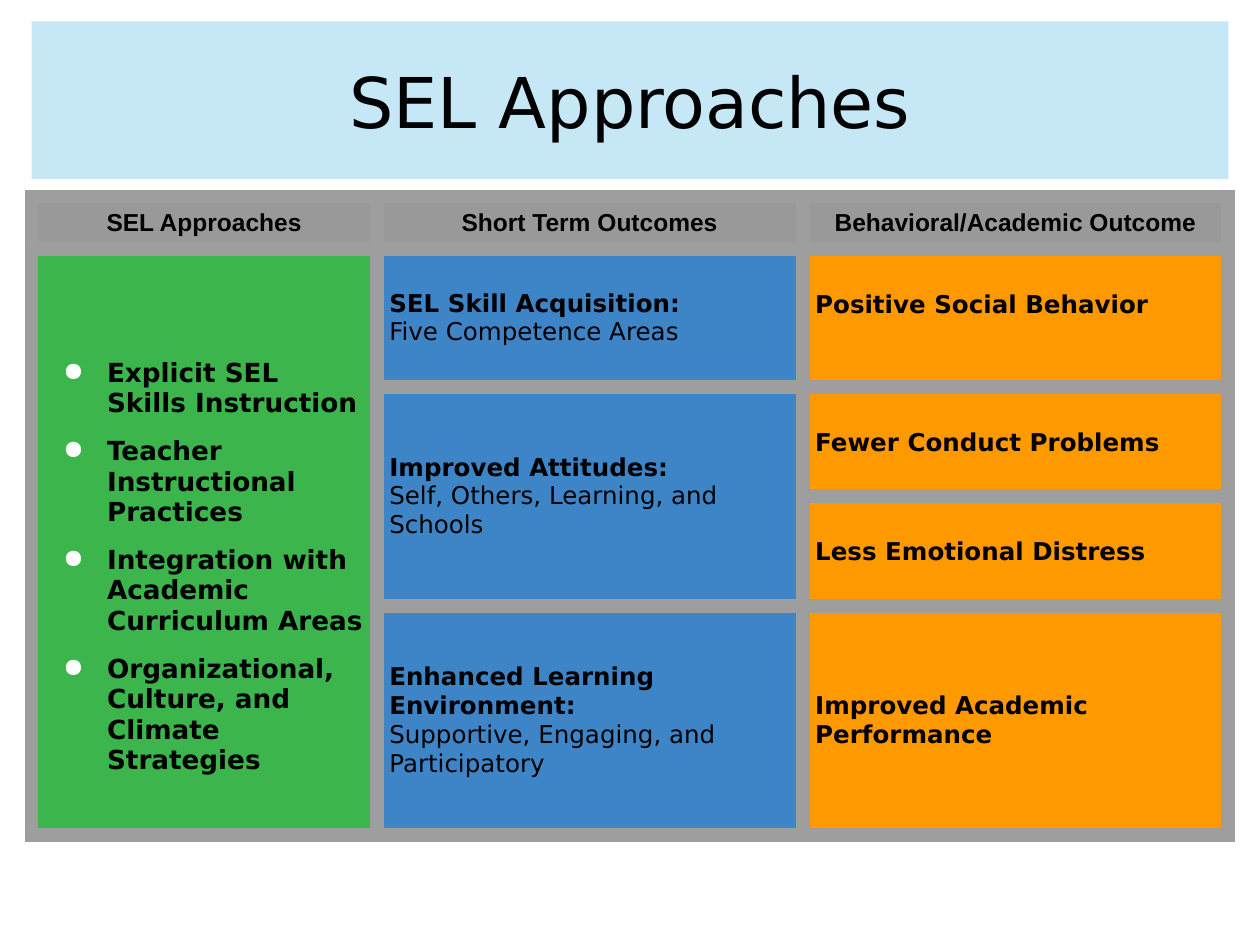
"""Build the SEL Approaches slide: a title band above a table of approaches and outcomes."""
from lxml import etree
from pptx import Presentation
from pptx.dml.color import RGBColor
from pptx.enum.text import MSO_ANCHOR, PP_ALIGN
from pptx.oxml import parse_xml
from pptx.oxml.ns import nsdecls, qn
from pptx.util import Inches, Pt

BLACK = RGBColor(0x00, 0x00, 0x00)
PALE_BLUE = RGBColor(0xA9, 0xDC, 0xF2)
GRAY = RGBColor(0x99, 0x99, 0x99)
GREEN = RGBColor(0x3B, 0xB5, 0x4C)
BLUE = RGBColor(0x3D, 0x85, 0xC6)
ORANGE = RGBColor(0xFF, 0x99, 0x00)
BORDER = RGBColor(0x9E, 0x9E, 0x9E)

COLUMN_WIDTHS = [2.74, 3.38, 3.38]
ROW_HEIGHTS = [0.42, 1.09, 0.87, 0.87, 1.82]
HEADINGS = ["SEL Approaches", "Short Term Outcomes", "Behavioral/Academic Outcome"]
APPROACHES = [
    "Explicit SEL Skills Instruction",
    "Teacher Instructional Practices",
    "Integration with Academic Curriculum Areas",
    "Organizational, Culture, and Climate Strategies",
]
SHORT_TERM = [
    (1, "SEL Skill Acquisition:", "Five Competence Areas"),
    (2, "Improved Attitudes:", "Self, Others, Learning, and Schools"),
    (4, "Enhanced Learning Environment:", "Supportive, Engaging, and Participatory"),
]
BEHAVIORAL = [
    (1, "Positive Social Behavior", 0.33, MSO_ANCHOR.TOP),
    (2, "Fewer Conduct Problems", 0.33, MSO_ANCHOR.TOP),
    (3, "Less Emotional Distress", 0.33, MSO_ANCHOR.TOP),
    (4, "Improved Academic Performance", 0.1, MSO_ANCHOR.MIDDLE),
]


def style(paragraph, size, bold=True, face="DejaVu Sans"):
    font = paragraph.font
    font.name, font.size, font.bold = face, Pt(size), bold
    font.color.rgb = BLACK


def fill_cell(cell, lines, top=0.1, anchor=MSO_ANCHOR.TOP):
    cell.margin_top = Inches(top)
    cell.vertical_anchor = anchor
    cell.text = "\n".join(lines)
    return cell.text_frame.paragraphs


prs = Presentation()
prs.slide_width, prs.slide_height = Inches(10), Inches(7.5)
slide = prs.slides.add_slide(prs.slide_layouts[5])

outcomes_frame = slide.shapes.add_table(
    len(ROW_HEIGHTS), len(COLUMN_WIDTHS), Inches(0.25), Inches(1.56), Inches(9.5), Inches(5.18)
)
outcomes = outcomes_frame.table
outcomes.first_row = outcomes.horz_banding = False
for column, width in zip(outcomes.columns, COLUMN_WIDTHS):
    column.width = Inches(width)
for row, height in zip(outcomes.rows, ROW_HEIGHTS):
    row.height = Inches(height)
outcomes_frame.height = Inches(5.18)

for row_index, row in enumerate(outcomes.rows):
    for cell, body_color in zip(row.cells, (GREEN, BLUE, ORANGE)):
        cell.margin_left = cell.margin_right = Inches(0.1)
        cell.margin_top = cell.margin_bottom = Inches(0.1)
        for side in ("lnL", "lnR", "lnT", "lnB"):
            cell._tc.get_or_add_tcPr().append(parse_xml(
                f'<a:{side} {nsdecls("a")} w="{Pt(9)}"><a:solidFill>'
                f'<a:srgbClr val="{BORDER}"/></a:solidFill></a:{side}>'
            ))
        cell.fill.solid()
        cell.fill.fore_color.rgb = body_color if row_index else GRAY

outcomes.cell(1, 0).merge(outcomes.cell(4, 0))
outcomes.cell(2, 1).merge(outcomes.cell(3, 1))

for column_index, heading in enumerate(HEADINGS):
    paragraph = fill_cell(outcomes.cell(0, column_index), [heading])[0]
    paragraph.alignment = PP_ALIGN.CENTER
    style(paragraph, 14, face="Arial")

for index, paragraph in enumerate(fill_cell(outcomes.cell(1, 0), APPROACHES, top=0.86)):
    props = paragraph._p.get_or_add_pPr()
    props.set("marL", str(Inches(0.5)))
    props.set("indent", str(Inches(-0.35)))
    bullet_color = etree.SubElement(props, qn("a:buClr"))
    etree.SubElement(bullet_color, qn("a:srgbClr"), val="FFFFFF")
    etree.SubElement(props, qn("a:buChar"), char="●")
    if index:
        paragraph.space_before = Pt(10)
    style(paragraph, 15)

for row_index, outcome, detail in SHORT_TERM:
    cell = outcomes.cell(row_index, 1)
    heading, description = fill_cell(cell, [outcome, detail], anchor=MSO_ANCHOR.MIDDLE)
    style(heading, 14)
    style(description, 14, bold=False)

for row_index, outcome, top, anchor in BEHAVIORAL:
    style(fill_cell(outcomes.cell(row_index, 2), [outcome], top, anchor)[0], 14)

title = slide.shapes.title
title.left, title.top = Inches(0.25), Inches(0.17)
title.width, title.height = Inches(9.5), Inches(1.25)
title.fill.solid()
title.fill.fore_color.rgb = PALE_BLUE
band_color = title._element.spPr.find(f'{qn("a:solidFill")}/{qn("a:srgbClr")}')
etree.SubElement(band_color, qn("a:alpha"), val="67000")
title.text_frame.text = "SEL Approaches"
title.text_frame.vertical_anchor = MSO_ANCHOR.MIDDLE
title_line = title.text_frame.paragraphs[0]
title_line.alignment = PP_ALIGN.CENTER
style(title_line, 40, bold=False)

prs.save("out.pptx")
